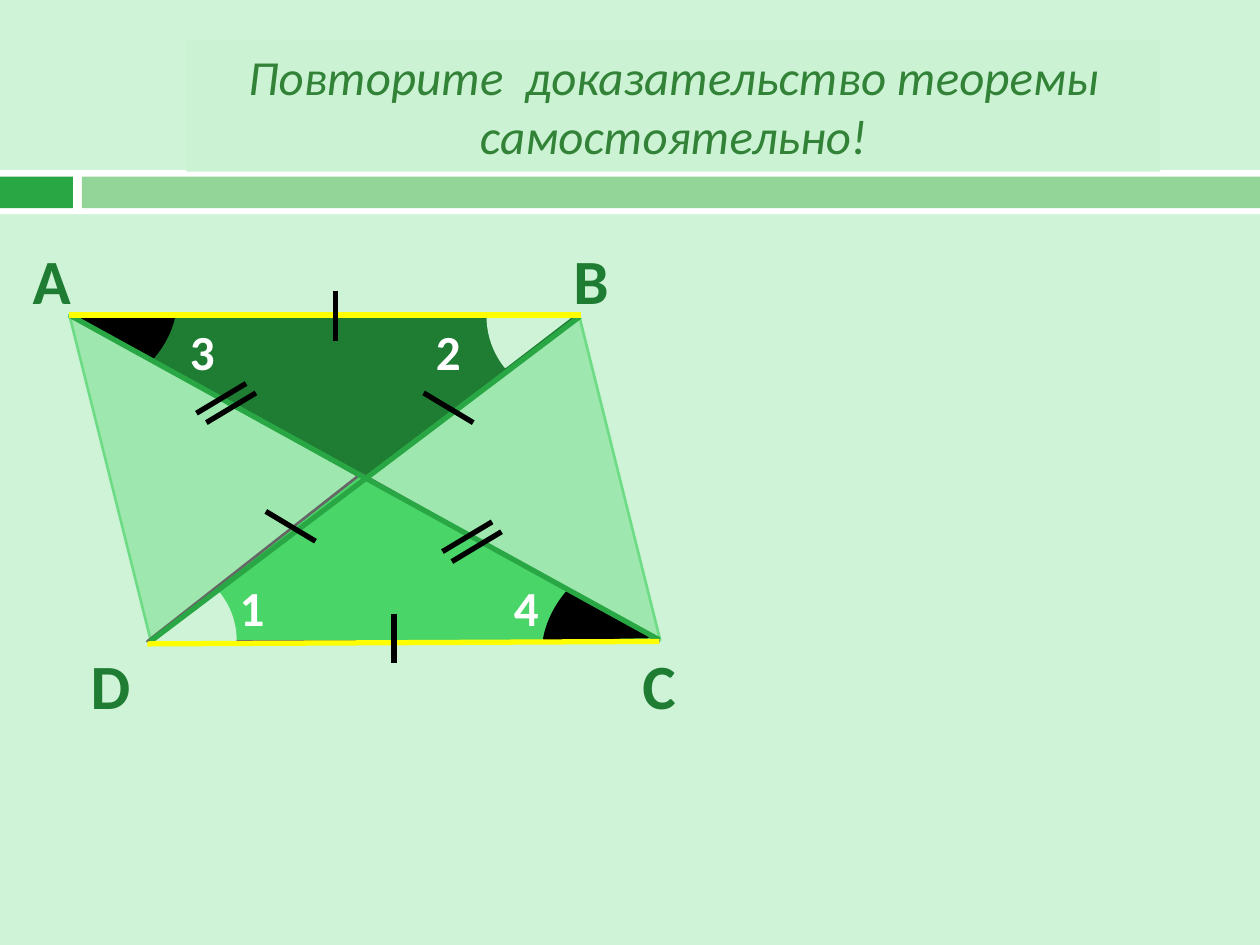
from lxml import etree
from pptx import Presentation
from pptx import util as u
from pptx.dml.color import RGBColor
from pptx.enum import shapes, text
from pptx.oxml.ns import qn

HUES = {
    "back": "CEF3D6", "white": "FFFFFF", "black": "000000", "bar": "93D598",
    "green": "29A744", "panel": "CBF3D3", "title": "328238", "dark": "1F7D33",
    "light": "4AD568", "pale": "9EE7AE", "edge": "6EDB85", "grey": "666666",
    "yellow": "FFFF00",
}
KIND = shapes.MSO_SHAPE


def hue(name):
    return RGBColor.from_string(HUES[name])


def put(slide, kind, box, fill, line=None, turn=0):
    shape = slide.shapes.add_shape(kind, *map(u.Cm, box))
    shape.shadow.inherit = False
    shape.fill.solid()
    shape.fill.fore_color.rgb = hue(fill)
    if line:
        shape.line.color.rgb = hue(line)
        shape.line.width = u.Pt(1.5)
    else:
        shape.line.fill.background()
    shape.rotation = turn
    return shape


def write(frame, words, size, ink, bold=False, slant=False):
    frame.word_wrap = True
    run = frame.paragraphs[0].add_run()
    run.text = words
    font = run.font
    font.name, font.size = "Calibri", u.Pt(size)
    font.bold, font.italic = bold, slant
    font.color.rgb = hue(ink)


def label(slide, box, words, size, ink):
    frame = slide.shapes.add_textbox(*map(u.Cm, box)).text_frame
    frame.auto_size = text.MSO_AUTO_SIZE.SHAPE_TO_FIT_TEXT
    write(frame, words, size, ink, bold=True)


def stroke(slide, start, end, ink):
    line = slide.shapes.add_connector(
        shapes.MSO_CONNECTOR.STRAIGHT, *map(u.Cm, start + end))
    line.line.color.rgb = hue(ink)
    line.line.width = u.Pt(3)
    etree.SubElement(line._element.spPr, qn("a:effectLst"))


def band(slide, x, y, wide, high):
    """Two-part strip under the title."""
    put(slide, KIND.RECTANGLE, (x, y, wide, high), "white")
    top, tall = y + 0.13, high - 0.25
    put(slide, KIND.RECTANGLE, (x, top, 1.47, tall), "green")
    put(slide, KIND.RECTANGLE, (x + 1.65, top, wide - 1.65, tall), "bar")


def head(slide, box):
    frame = put(slide, KIND.RECTANGLE, box, "panel").text_frame
    frame.vertical_anchor = text.MSO_ANCHOR.MIDDLE
    write(frame, "Повторите  доказательство теоремы самостоятельно!",
          28, "title", slant=True)
    frame.paragraphs[0].alignment = text.PP_ALIGN.CENTER


def figure(slide, x, y, wide, high):
    """Parallelogram with its diagonals, equal angles and equal sides."""
    def at(left, top, *size):
        return (x + left, y + top, *size)

    body = put(slide, KIND.PARALLELOGRAM, at(0, 0, wide, high), "pale", "edge")
    body.adjustments[0] = 0.25
    body._element.spPr.find(qn("a:xfrm")).set("flipH", "1")

    for box, skew, fill, line, turn in (
        ((0, 0, 10.26, 3.33), 0.422, "dark", None, 180),
        ((1.57, 3.2, 10.31, 3.38), 0.418, "light", "grey", 0),
    ):
        half = put(slide, KIND.ISOSCELES_TRIANGLE, at(*box), fill, line, turn)
        half.adjustments[0] = skew

    for box, turn, angles, ink in (
        ((-2.01, -1.68, 4.22, 3.35), 336.3, (23.6, 54.5), "black"),
        ((9.47, 4.75, 4.37, 3.48), 154.3, (24.7, 55.5), "black"),
        ((0.18, 4.93, 3.1, 3.23), 97.1, (224.9, 263.1), "back"),
        ((8.46, -1.65, 3.3, 3.35), 270, (232.5, 269.3), "back"),
    ):
        wedge = put(slide, KIND.PIE, at(*box), ink, ink, turn)
        for i, angle in enumerate(angles):
            wedge.adjustments[i] = angle * 0.6  # 60000 units a degree

    for words, left, top in (("А", -0.99, -1.6), ("В", 9.91, -1.6),
                             ("С", 11.3, high), ("D", 0.18, high)):
        label(slide, at(left, top, 1.78, 1.8), words, 36, "dark")
    for words, left, top in (("1", 3.18, 5.16), ("2", 7.14, 0),
                             ("3", 2.18, 0), ("4", 8.71, 5.16)):
        label(slide, at(left, top, 1.3, 1.45), words, 28, "white")

    for start, end, ink in (
        ((0, 0), (11.89, 6.55), "green"),
        ((1.63, 6.58), (10.29, 0.03), "green"),
        ((1.57, 6.63), (11.89, 6.58), "yellow"),
        ((0, 0), (10.31, 0), "yellow"),
    ):
        stroke(slide, at(*start), at(*end), ink)

    falls, rises, stands = (1, 0.6), (-1, 0.6), (0, 1)
    for left, top, (dx, dy) in (
        (7.14, 1.57, falls), (3.96, 3.96, falls),
        (3.76, 1.57, rises), (3.56, 1.38, rises),
        (8.71, 4.37, rises), (8.52, 4.17, rises),
        (6.54, 6.02, stands), (5.36, -0.48, stands),
    ):
        stroke(slide, at(left, top), at(left + dx, top + dy), "black")


def main():
    deck = Presentation()
    deck.slide_width, deck.slide_height = u.Cm(25.4), u.Cm(19.05)
    slide = deck.slides.add_slide(deck.slide_layouts[6])
    slide.background.fill.solid()
    slide.background.fill.fore_color.rgb = hue("back")
    band(slide, 0, 3.43, 25.4, 0.89)
    head(slide, (3.76, 0.79, 19.63, 2.67))
    figure(slide, 1.4, 6.35, 11.91, 6.55)
    deck.save("out.pptx")


if __name__ == "__main__":
    main()
